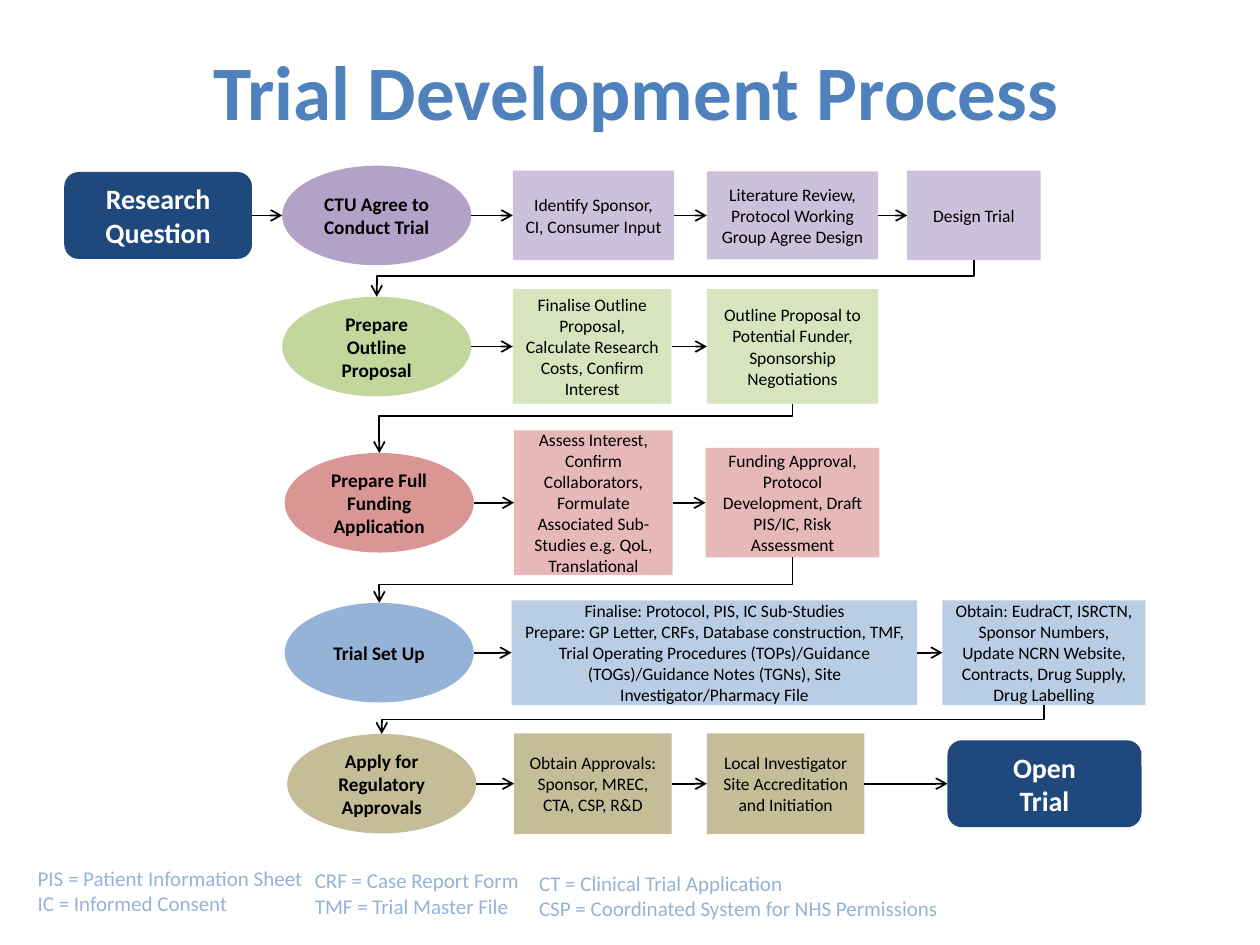
from itertools import pairwise

from lxml.etree import SubElement
from pptx import Presentation
from pptx.dml.color import RGBColor
from pptx.enum.shapes import MSO_CONNECTOR as Link, MSO_SHAPE as Shape
from pptx.enum.text import MSO_ANCHOR as Anchor, PP_ALIGN as Align
from pptx.oxml.ns import qn
from pptx.util import Inches, Pt

FONT, BLACK, WHITE, NAVY = "Calibri", "000000", "FFFFFF", "1F497D"
STAGE = (Shape.OVAL, 11, BLACK, True)
TASK = (Shape.RECTANGLE, 10, BLACK, False)
TERMINAL = (Shape.ROUNDED_RECTANGLE, 16, WHITE, True)

# Each step: style, gap before, width, height, text
ROWS = [
    (0.51, 1.71, "B3A2C7", "CCC1DA", [
        (TERMINAL, 0, 1.49, 0.69, "Research Question"),
        (STAGE, 0.24, 1.5, 0.79, "CTU Agree to Conduct Trial"),
        (TASK, 0.33, 1.28, 0.71, "Identify Sponsor, CI, Consumer Input"),
        (TASK, 0.26, 1.36, 0.7, "Literature Review,\nProtocol Working Group Agree Design"),
        (TASK, 0.23, 1.06, 0.71, "Design Trial")]),
    (2.24, 2.75, "C3D69B", "D7E4BD", [
        (STAGE, 0, 1.5, 0.79, "Prepare Outline Proposal"),
        (TASK, 0.33, 1.26, 0.91, "Finalise Outline Proposal, Calculate Research Costs, Confirm Interest"),
        (TASK, 0.28, 1.36, 0.91, "Outline Proposal to Potential Funder, Sponsorship Negotiations")]),
    (2.26, 3.99, "D99694", "E6B9B8", [
        (STAGE, 0, 1.5, 0.79, "Prepare Full Funding Application"),
        (TASK, 0.32, 1.26, 1.15, "Assess Interest, Confirm Collaborators, Formulate Associated "
                                 "Sub-Studies e.g. QoL, Translational"),
        (TASK, 0.26, 1.38, 0.87, "Funding Approval, Protocol Development, Draft PIS/IC, Risk Assessment")]),
    (2.26, 5.18, "95B3D7", "B9CDE5", [
        (STAGE, 0, 1.5, 0.79, "Trial Set Up"),
        (TASK, 0.3, 3.22, 0.83, "Finalise: Protocol, PIS, IC Sub-Studies\n"
                                "Prepare: GP Letter, CRFs, Database construction, TMF, Trial Operating "
                                "Procedures (TOPs)/Guidance (TOGs)/Guidance Notes (TGNs), Site "
                                "Investigator/Pharmacy File"),
        (TASK, 0.2, 1.61, 0.83, "Obtain: EudraCT, ISRCTN, Sponsor Numbers, Update NCRN Website, "
                                "Contracts, Drug Supply, Drug Labelling")]),
    (2.28, 6.22, "C4BD97", "C4BD97", [
        (STAGE, 0, 1.5, 0.79, "Apply for Regulatory Approvals"),
        (TASK, 0.3, 1.25, 0.8, "Obtain Approvals: Sponsor, MREC, CTA, CSP, R&D"),
        (TASK, 0.28, 1.25, 0.8, "Local Investigator Site Accreditation and Initiation"),
        (TERMINAL, 0.66, 1.54, 0.69, "Open\nTrial")]),
]
RAILS = [2.19, 3.3, 4.64, 5.71]
LEGEND = [
    (0.2, 6.82, 2.68, "PIS = Patient Information Sheet\nIC = Informed Consent"),
    (2.4, 6.84, 2.52, "CRF = Case Report Form\nTMF = Trial Master File"),
    (4.18, 6.86, 4.55, "CT = Clinical Trial Application\nCSP = Coordinated System for NHS Permissions"),
]


def color(value):
    """Return the colour for a hex string."""
    return RGBColor.from_string(value)


def write(box, text, size, ink, bold=False, align=Align.CENTER):
    """Write one paragraph per line of text into a shape."""
    frame = box.text_frame
    frame.word_wrap = True
    for index, line in enumerate(text.split("\n")):
        para = frame.paragraphs[0] if index == 0 else frame.add_paragraph()
        para.alignment = align
        span = para.add_run()
        span.text = line
        span.font.name, span.font.size, span.font.bold = FONT, Pt(size), bold
        span.font.color.rgb = color(ink)


def add_step(page, style, left, middle, width, height, fill, text):
    """Add one filled step centred vertically on its row."""
    kind, size, ink, bold = style
    box = page.shapes.add_shape(kind, Inches(left), Inches(middle - height / 2),
                                Inches(width), Inches(height))
    box.shadow.inherit = False
    box.fill.solid()
    box.fill.fore_color.rgb = color(fill)
    box.line.fill.background()
    box.text_frame.vertical_anchor = Anchor.MIDDLE
    write(box, text, size, ink, bold)
    return box


def add_arrow(page, kind, start, end, start_site, end_site):
    """Add a black arrow glued to two steps."""
    arrow = page.shapes.add_connector(kind, 0, 0, 0, 0)
    arrow.begin_connect(start, start_site)
    arrow.end_connect(end, end_site)
    for box, tag, site in ((start, "a:stCxn", start_site), (end, "a:endCxn", end_site)):
        if box.auto_shape_type == Shape.OVAL:
            next(arrow._element.iter(qn(tag))).set("idx", str(site * 2))
    arrow.line.color.rgb = color(BLACK)
    arrow.line.width = Pt(1)
    SubElement(arrow.line._get_or_add_ln(), qn("a:tailEnd"), type="arrow")
    SubElement(arrow._element.spPr, qn("a:effectLst"))
    return arrow


def add_row(page, left, middle, stage_fill, task_fill, steps):
    """Lay out a row of steps from its left edge and join them by arrows."""
    fills = {STAGE: stage_fill, TASK: task_fill, TERMINAL: NAVY}
    boxes = []
    for style, gap, width, height, text in steps:
        left += gap
        boxes.append(add_step(page, style, left, middle, width, height, fills[style], text))
        left += width
    for start, end in pairwise(boxes):
        add_arrow(page, Link.STRAIGHT, start, end, 3, 1)
    return boxes


def add_return(page, start, end, rail):
    """Lead from the bottom of a row's last step along a rail to the next stage."""
    arrow = add_arrow(page, Link.ELBOW, start, end, 2, 0)
    right, top = start.left + start.width // 2, start.top + start.height
    drop, run = end.top - top, right - (end.left + end.width // 2)
    arrow.left, arrow.top = right - (run + drop) // 2, top + (drop - run) // 2
    arrow.width, arrow.height = drop, run
    frame = next(arrow._element.iter(qn("a:xfrm")))
    for flip in ("flipH", "flipV"):
        frame.attrib.pop(flip, None)
    frame.set("rot", "5400000")
    bend = round((Inches(rail) - top) / drop * 100000)
    guides = next(arrow._element.iter(qn("a:avLst")))
    SubElement(guides, qn("a:gd"), name="adj1", fmla=f"val {bend}")


def add_title(page, left, top, width, height):
    """Place and format the title."""
    title = page.shapes.title
    title.left, title.top = Inches(left), Inches(top)
    title.width, title.height = Inches(width), Inches(height)
    write(title, "Trial Development Process", 44, "4F81BD", True)


def add_legend(page, left, top, width, text):
    """Add one block of abbreviations."""
    box = page.shapes.add_textbox(Inches(left), Inches(top), Inches(width), Inches(0.5))
    write(box, text, 12, "95B3D7", align=Align.LEFT)


def main():
    """Build and save the deck."""
    deck = Presentation()
    deck.slide_width, deck.slide_height = Inches(10), Inches(7.5)
    page = deck.slides.add_slide(deck.slide_layouts[5])
    add_title(page, 0.61, 0.29, 8.88, 0.84)
    rows = [add_row(page, *row) for row in ROWS]
    for (row, following), rail in zip(pairwise(rows), RAILS):
        add_return(page, row[-1], following[0], rail)
    for block in LEGEND:
        add_legend(page, *block)
    deck.save("out.pptx")


if __name__ == "__main__":
    main()
